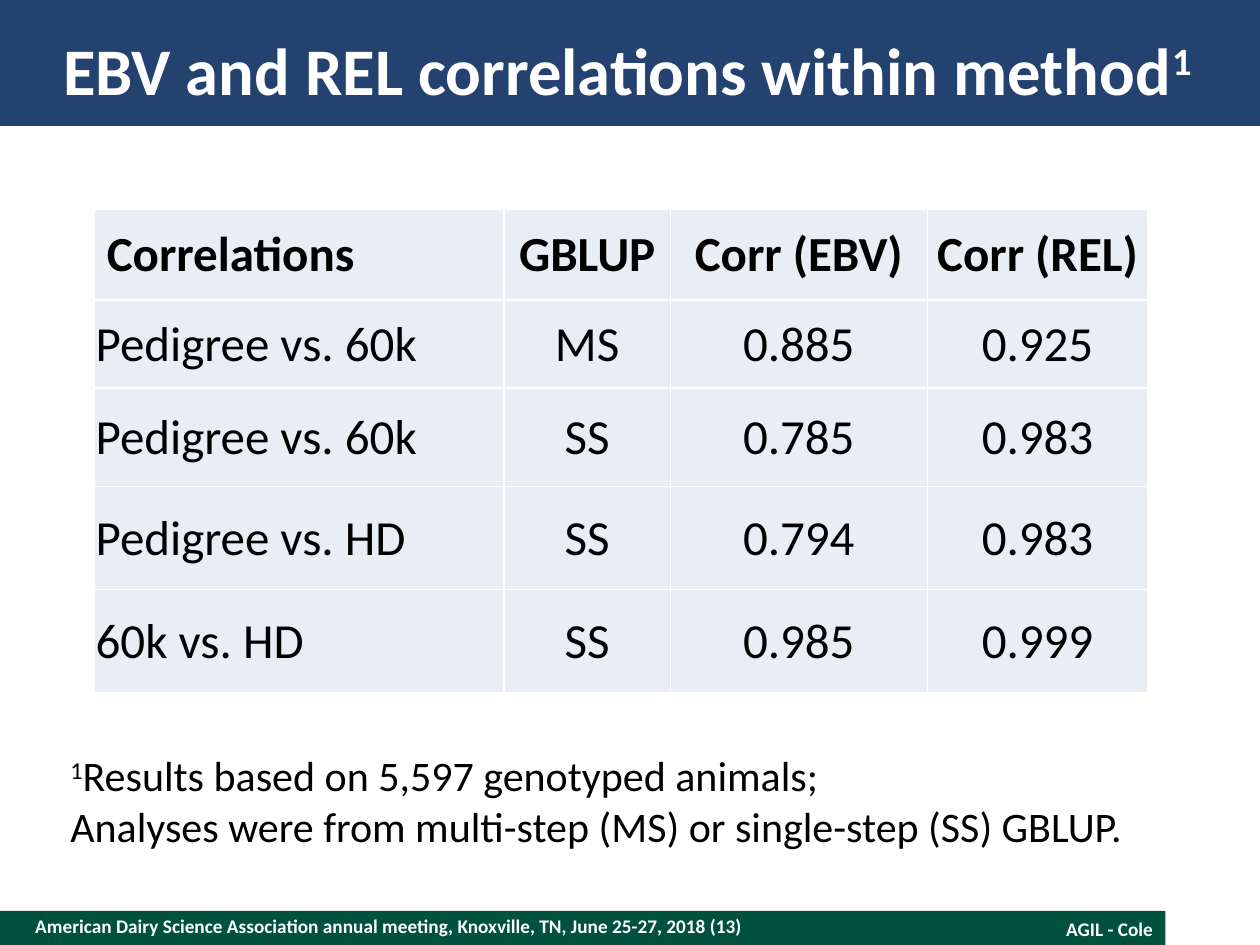
from lxml.etree import SubElement
from pptx import Presentation
from pptx.dml.color import RGBColor
from pptx.enum.shapes import MSO_SHAPE
from pptx.enum.text import MSO_ANCHOR, MSO_AUTO_SIZE, PP_ALIGN
from pptx.oxml.ns import qn
from pptx.util import Inches, Pt

COLORS = {"navy": "244270", "green": "00523C", "cell": "E9EDF4",
          "white": "FFFFFF", "black": "000000"}
SUPERSCRIPT = "30000"


def color(name):
    return RGBColor.from_string(COLORS[name])


def write(tf, paragraphs, size, fill="black", bold=False, align=PP_ALIGN.LEFT,
          anchor=MSO_ANCHOR.TOP, margins=(0, 0, 0, 0), wrap=True):
    """Fill a text frame; each paragraph is a list of (text, is_superscript)."""
    tf.auto_size = MSO_AUTO_SIZE.NONE
    tf.word_wrap = wrap
    tf.vertical_anchor = anchor
    tf.margin_left, tf.margin_top, tf.margin_right, tf.margin_bottom = map(Inches, margins)
    for i, runs in enumerate(paragraphs):
        p = tf.add_paragraph() if i else tf.paragraphs[0]
        p.alignment = align
        for text, raised in runs:
            r = p.add_run()
            r.text = text
            r.font.name, r.font.size, r.font.bold = "Calibri", Pt(size), bold
            r.font.color.rgb = color(fill)
            if raised:
                r._r.get_or_add_rPr().set("baseline", SUPERSCRIPT)


prs = Presentation()
prs.slide_width, prs.slide_height = Inches(10), Inches(7.5)
slide = prs.slides.add_slide(prs.slide_layouts[5])
shapes = slide.shapes

# Footer and title bands
for name, top, width, height in [("green", 7.23, 9.25, 0.27), ("navy", 0, 10, 1)]:
    sp = shapes.add_shape(MSO_SHAPE.RECTANGLE, 0, Inches(top), Inches(width), Inches(height))
    sp.shadow.inherit = False
    sp.fill.solid()
    sp.fill.fore_color.rgb = color(name)
    sp.line.fill.background()

# Footer text
sp = shapes.add_textbox(Inches(0.28), Inches(7.2), Inches(7.7), Inches(0.3))
write(sp.text_frame,
      [[("American Dairy Science Association annual meeting, Knoxville, TN, "
         "June 25-27, 2018 (13)", False)]],
      size=11, fill="white", bold=True, anchor=MSO_ANCHOR.MIDDLE)
sp = shapes.add_textbox(Inches(7.25), Inches(7.23), Inches(2), Inches(0.29))
write(sp.text_frame, [[("AGIL - Cole", False)]], size=11, fill="white", bold=True,
      align=PP_ALIGN.RIGHT, margins=(0.1, 0.05, 0.1, 0.05))

# Title, brought in front of its band
title = shapes.title
title.left, title.top, title.width, title.height = map(Inches, (0.5, 0.2, 9.2, 0.7))
write(title.text_frame, [[("EBV and REL correlations within method", False), ("1", True)]],
      size=38, fill="white", bold=True, anchor=MSO_ANCHOR.MIDDLE)
shapes._spTree.append(title._element)

# Footnote
sp = shapes.add_textbox(Inches(0.46), Inches(5.9), Inches(8.78), Inches(0.91))
write(sp.text_frame,
      [[("1", True), ("Results based on 5,597 genotyped animals;", False)],
       [("Analyses were from multi-step (MS) or single-step (SS) GBLUP.", False)]],
      size=24, margins=(0.1, 0.05, 0.1, 0.05), wrap=False)

# Correlation table
rows = [
    (" Correlations", "GBLUP", "Corr (EBV)", "Corr (REL)"),
    ("Pedigree vs. 60k", "MS", "0.885", "0.925"),
    ("Pedigree vs. 60k", "SS", "0.785", "0.983"),
    ("Pedigree vs. HD", "SS", "0.794", "0.983"),
    ("60k vs. HD", "SS", "0.985", "0.999"),
]
col_widths = [3.25, 1.32, 2.04, 1.75]
row_heights = [0.72, 0.7, 0.78, 0.82, 0.82]
table = shapes.add_table(len(rows), len(col_widths), Inches(0.75), Inches(1.66),
                         Inches(sum(col_widths)), Inches(sum(row_heights))).table
for column, width in zip(table.columns, col_widths):
    column.width = Inches(width)
for row, height in zip(table.rows, row_heights):
    row.height = Inches(height)

for i, values in enumerate(rows):
    for j, value in enumerate(values):
        cell = table.cell(i, j)
        write(cell.text_frame, [[(value, False)]], size=28, bold=i == 0,
              align=PP_ALIGN.CENTER if j else PP_ALIGN.LEFT)
        cell.vertical_anchor = MSO_ANCHOR.MIDDLE
        cell.margin_left = cell.margin_top = cell.margin_right = Inches(0.01)
        cell.margin_bottom = 0
        # Borders come before the fill in the cell properties
        tcPr = cell._tc.get_or_add_tcPr()
        for side in ("a:lnL", "a:lnR", "a:lnT", "a:lnB"):
            ln = SubElement(tcPr, qn(side), w=str(Pt(1)))
            SubElement(SubElement(ln, qn("a:solidFill")), qn("a:srgbClr"), val=COLORS["white"])
        cell.fill.solid()
        cell.fill.fore_color.rgb = color("cell")

prs.save("out.pptx")
